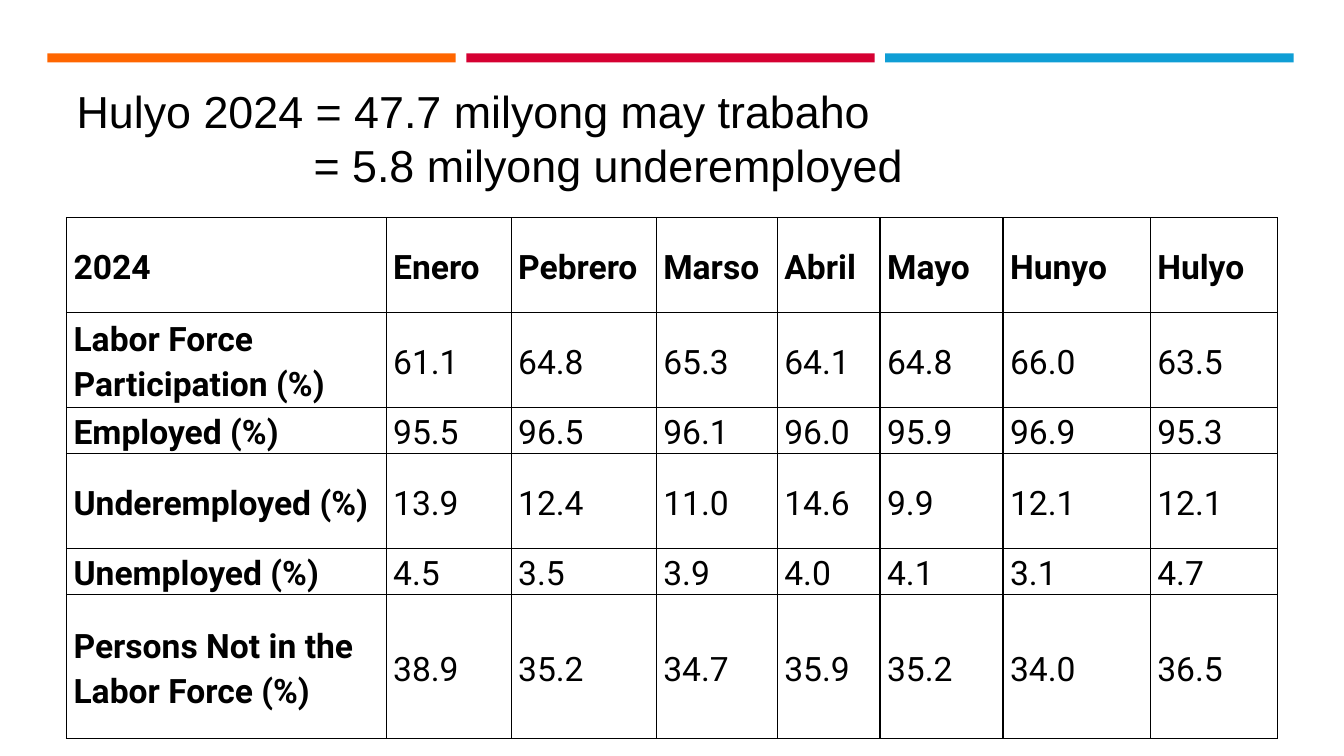
from lxml import etree
from pptx import Presentation
from pptx.dml.color import RGBColor
from pptx.enum import shapes, text
from pptx.oxml import ns
from pptx.util import Emu, Inches, Pt

HEADLINE = ["Hulyo 2024 = 47.7 milyong may trabaho", "= 5.8 milyong underemployed"]
HEADLINE_INDENTS = [0, 2.35]
LABOR_ROWS = [
    ["2024", "Enero", "Pebrero", "Marso", "Abril", "Mayo", "Hunyo", "Hulyo"],
    ["Labor Force Participation (%)", "61.1", "64.8", "65.3", "64.1", "64.8", "66.0", "63.5"],
    ["Employed (%)", "95.5", "96.5", "96.1", "96.0", "95.9", "96.9", "95.3"],
    ["Underemployed (%)", "13.9", "12.4", "11.0", "14.6", "9.9", "12.1", "12.1"],
    ["Unemployed (%)", "4.5", "3.5", "3.9", "4.0", "4.1", "3.1", "4.7"],
    ["Persons Not in the Labor Force (%)", "38.9", "35.2", "34.7", "35.9", "35.2", "34.0", "36.5"],
]
COLUMN_WIDTHS = [3.17, 1.24, 1.44, 1.2, 1.02, 1.22, 1.46, 1.26]
ROW_HEIGHTS = [0.94, 0.94, 0.46, 0.94, 0.46, 1.43]

THEME = {
    "stripes": ["FF6600", "D50032", "0F9ED5"],
    "ink": "000000",
    "paper": "FFFFFF",
    "headline": {"name": "Arial", "size": Pt(32), "bold": False},
    "table": {"name": "Roboto", "size": Pt(24)},
    "border": Pt(1),
}
CELL_FORMAT = {
    "margin_left": Inches(0.07), "margin_right": Inches(0.07),
    "margin_top": 0, "margin_bottom": 0,
    "vertical_anchor": text.MSO_ANCHOR.MIDDLE,
}
HEADLINE_FRAME = {
    "word_wrap": True, "auto_size": text.MSO_AUTO_SIZE.NONE,
    "vertical_anchor": text.MSO_ANCHOR.TOP,
    "margin_left": Inches(0.1), "margin_right": Inches(0.1),
    "margin_top": Inches(0.05), "margin_bottom": Inches(0.05),
}
LEFT = 0.66


def apply(target, values):
    for key, value in values.items():
        setattr(target, key, value)


def style_font(font, values):
    apply(font, values)
    font.color.rgb = RGBColor.from_string(THEME["ink"])


def add_stripes(slide):
    left, width, pitch = 0.47, 4.05, 4.155
    for i, color in enumerate(THEME["stripes"]):
        stripe = slide.shapes.add_shape(
            shapes.MSO_SHAPE.RECTANGLE, Inches(left + i * pitch), Inches(0.53),
            Inches(width), Inches(0.09))
        stripe.shadow.inherit = False
        stripe.fill.solid()
        stripe.fill.fore_color.rgb = RGBColor.from_string(color)
        stripe.line.fill.background()


def add_headline(slide):
    title = slide.shapes.title
    apply(title, {"left": Inches(LEFT), "top": Inches(0.78),
                  "width": Inches(12.02), "height": Inches(1.18)})
    frame = title.text_frame
    apply(frame, HEADLINE_FRAME)
    frame.text = "\n".join(HEADLINE)
    for paragraph, indent in zip(frame.paragraphs, HEADLINE_INDENTS):
        paragraph.alignment = text.PP_ALIGN.LEFT
        paragraph._p.get_or_add_pPr().set("marL", str(Inches(indent)))
        style_font(paragraph.runs[0].font, THEME["headline"])


def add_borders(cell):
    properties = cell._tc.get_or_add_tcPr()
    for side in ("a:lnL", "a:lnR", "a:lnT", "a:lnB"):
        line = etree.SubElement(properties, ns.qn(side), w=str(THEME["border"]))
        fill = etree.SubElement(line, ns.qn("a:solidFill"))
        etree.SubElement(fill, ns.qn("a:srgbClr"), val=THEME["ink"])


def fill_cell(cell, value, bold):
    apply(cell, CELL_FORMAT)
    add_borders(cell)
    cell.fill.solid()
    cell.fill.fore_color.rgb = RGBColor.from_string(THEME["paper"])
    cell.text = value
    paragraph = cell.text_frame.paragraphs[0]
    paragraph.line_spacing = 1.15
    style_font(paragraph.runs[0].font, {**THEME["table"], "bold": bold})


def add_labor_table(slide):
    table = slide.shapes.add_table(
        len(LABOR_ROWS), len(COLUMN_WIDTHS), Inches(LEFT), Inches(2.16),
        Inches(sum(COLUMN_WIDTHS)), Inches(sum(ROW_HEIGHTS))).table
    apply(table, {"first_row": False, "horz_banding": False})
    for column, width in zip(table.columns, COLUMN_WIDTHS):
        column.width = Inches(width)
    for row, height in zip(table.rows, ROW_HEIGHTS):
        row.height = Inches(height)
    for r, values in enumerate(LABOR_ROWS):
        for c, value in enumerate(values):
            fill_cell(table.cell(r, c), value, bold=r == 0 or c == 0)


def main():
    deck = Presentation()
    apply(deck, {"slide_width": Inches(13.33), "slide_height": Inches(7.5)})
    slide = deck.slides.add_slide(deck.slide_layouts.get_by_name("Title Only"))
    add_stripes(slide)
    add_labor_table(slide)
    add_headline(slide)
    deck.save("out.pptx")


if __name__ == "__main__":
    main()
